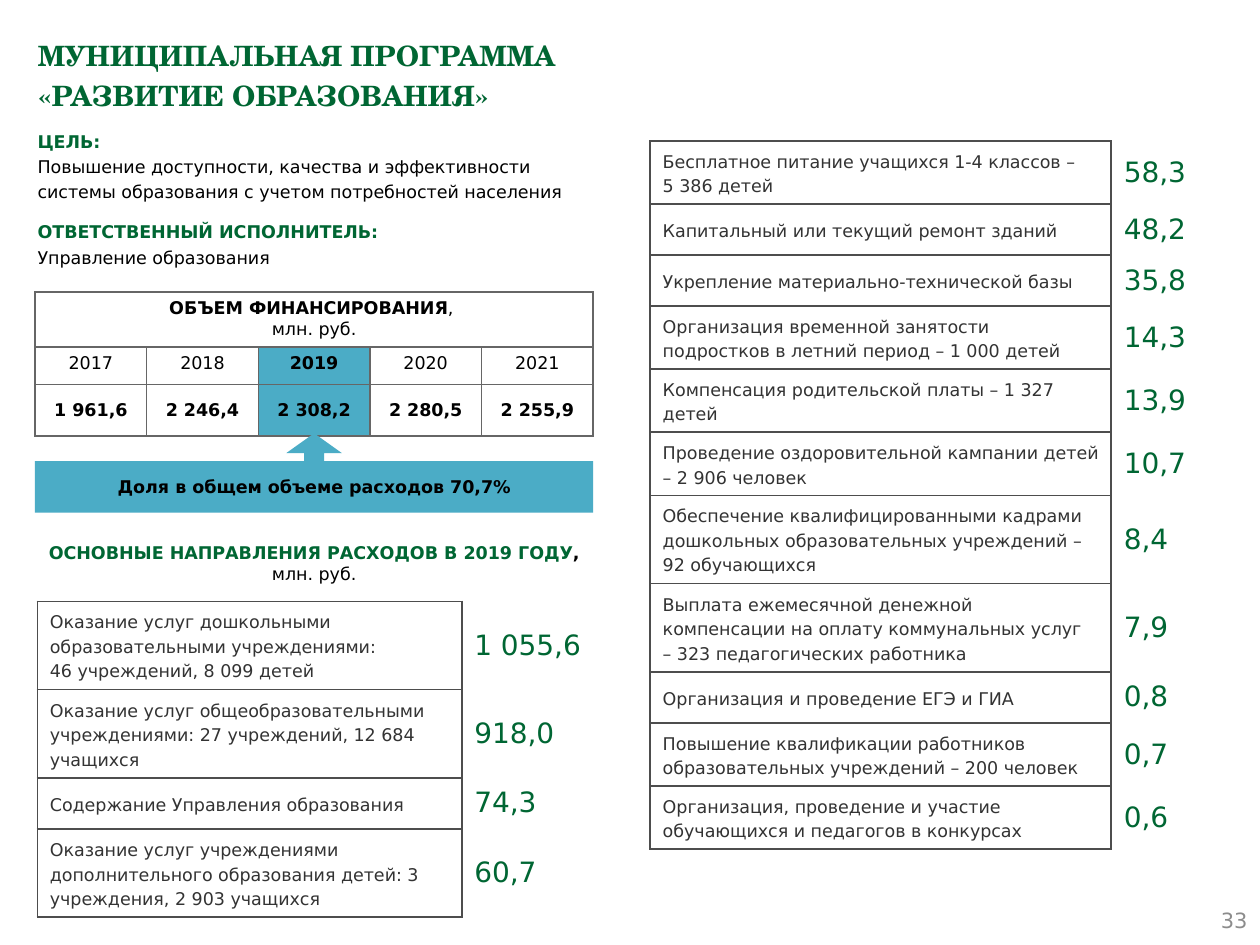
from lxml.etree import SubElement
from pptx import Presentation
from pptx.dml.color import RGBColor
from pptx.enum.shapes import MSO_SHAPE
from pptx.enum.text import MSO_ANCHOR, MSO_AUTO_SIZE, PP_ALIGN
from pptx.oxml.ns import qn
from pptx.util import Pt

SANS, SERIF = "DejaVu Sans", "TeX Gyre Schola"
GREEN = RGBColor(0x00, 0x66, 0x33)
BLACK = RGBColor(0x00, 0x00, 0x00)
TEAL = RGBColor(0x4B, 0xAC, 0xC6)
DARK = RGBColor(0x33, 0x33, 0x33)
EDGE = RGBColor(0x4D, 0x4D, 0x4D)
GRID = RGBColor(0x66, 0x66, 0x66)
PALE = RGBColor(0x8C, 0x8C, 0x8C)
PLAIN = "{2D5ABB26-0587-4C30-8999-92F81FD0307C}"

YEARS = [
    ("2017", "1 961,6"),
    ("2018", "2 246,4"),
    ("2019", "2 308,2"),
    ("2020", "2 280,5"),
    ("2021", "2 255,9"),
]
MAIN = [
    (["Оказание услуг дошкольными образовательными учреждениями:",
      "46 учреждений, 8 099 детей"], "1 055,6"),
    (["Оказание услуг общеобразовательными учреждениями: 27 учреждений, 12 684 учащихся"], "918,0"),
    (["Содержание Управления образования"], "74,3"),
    (["Оказание услуг учреждениями дополнительного образования детей: 3 учреждения, 2 903 учащихся"], "60,7"),
]
OTHER = [
    (["Бесплатное питание учащихся 1-4 классов –", "5 386 детей"], "58,3"),
    (["Капитальный или текущий ремонт зданий"], "48,2"),
    (["Укрепление материально-технической базы"], "35,8"),
    (["Организация временной занятости подростков в летний период – 1 000 детей"], "14,3"),
    (["Компенсация родительской платы – 1 327 детей"], "13,9"),
    (["Проведение оздоровительной кампании детей – 2 906 человек"], "10,7"),
    (["Обеспечение квалифицированными кадрами дошкольных образовательных учреждений – 92 обучающихся"], "8,4"),
    (["Выплата ежемесячной денежной компенсации на оплату коммунальных услуг  – 323 педагогических работника"], "7,9"),
    (["Организация и проведение ЕГЭ и ГИА"], "0,8"),
    (["Повышение квалификации работников образовательных учреждений – 200 человек"], "0,7"),
    (["Организация, проведение и участие обучающихся и педагогов в конкурсах"], "0,6"),
]


def add_run(para, text, color=BLACK, bold=False, size=10, face=SANS):
    run = para.add_run()
    run.text = text
    font = run.font
    font.name, font.size, font.bold = face, Pt(size), bold
    font.color.rgb = color


def fill_text(frame, paras, align=PP_ALIGN.LEFT, space=None):
    for i, runs in enumerate(paras):
        para = frame.add_paragraph() if i else frame.paragraphs[0]
        para.alignment, para.line_spacing = align, space
        for run in runs:
            add_run(para, *run)


def add_edges(cell, color, sides):
    props = cell._tc.get_or_add_tcPr()
    for side in sides:
        line = SubElement(props, qn(f"a:ln{side}"), w=str(Pt(1)))
        SubElement(SubElement(line, qn("a:solidFill")), qn("a:srgbClr"), val=str(color))


def add_grid(slide, box, cols, rows):
    table = slide.shapes.add_table(len(rows), len(cols), *map(Pt, box)).table
    table.first_row = table.horz_banding = False
    table._tbl.tblPr.find(qn("a:tableStyleId")).text = PLAIN
    for col, width in zip(table.columns, cols):
        col.width = Pt(width)
    for row, height in zip(table.rows, rows):
        row.height = Pt(height)
    return table


def add_title(slide, box):
    title = slide.shapes.title
    title.left, title.top, title.width, title.height = map(Pt, box)
    frame = title.text_frame
    frame.word_wrap, frame.auto_size = True, MSO_AUTO_SIZE.NONE
    frame.vertical_anchor = MSO_ANCHOR.TOP
    para = frame.paragraphs[0]
    para.alignment, para.line_spacing = PP_ALIGN.LEFT, 1.2
    add_run(para, "МУНИЦИПАЛЬНАЯ ПРОГРАММА ", GREEN, True, 16, SERIF)
    para.add_line_break()
    add_run(para, "«РАЗВИТИЕ ОБРАЗОВАНИЯ»", GREEN, True, 16, SERIF)


def add_goals(slide, box):
    frame = slide.shapes.add_textbox(*map(Pt, box)).text_frame
    frame.word_wrap = True
    fill_text(frame, [
        [("ЦЕЛЬ:", GREEN, True)],
        [("Повышение доступности, качества и эффективности системы образования с учетом потребностей населения",)],
        [("ОТВЕТСТВЕННЫЙ ИСПОЛНИТЕЛЬ:", GREEN, True)],
        [("Управление образования",)],
    ], space=1.2)
    frame.paragraphs[2].space_before = Pt(8.4)


def add_funds(slide, box):
    wide = box[2] / len(YEARS)
    table = add_grid(slide, box, [wide] * len(YEARS), [29.5, 21.5, 29.5])
    for cell in table.iter_cells():
        cell.margin_left = cell.margin_right = Pt(3.6)
        cell.margin_top = cell.margin_bottom = Pt(3.6)
        add_edges(cell, GRID, "LRTB")
    head = table.cell(0, 0)
    head.merge(table.cell(0, len(YEARS) - 1))
    fill_text(head.text_frame, [
        [("ОБЪЕМ ФИНАНСИРОВАНИЯ", BLACK, True), (", ",)],
        [("млн. руб.",)],
    ], PP_ALIGN.CENTER)
    for i, (year, sum_) in enumerate(YEARS):
        top, low = table.cell(1, i), table.cell(2, i)
        now = year == "2019"
        fill_text(top.text_frame, [[(year, BLACK, now)]], PP_ALIGN.CENTER)
        fill_text(low.text_frame, [[(sum_, BLACK, True)]], PP_ALIGN.CENTER)
        low.vertical_anchor = MSO_ANCHOR.MIDDLE
        if now:
            for cell in (top, low):
                cell.fill.solid()
                cell.fill.fore_color.rgb = TEAL


def add_costs(slide, box, cols, items):
    table = add_grid(slide, box, cols, [29.2] * len(items))
    for i, (lines, sum_) in enumerate(items):
        name, value = table.cell(i, 0), table.cell(i, 1)
        fill_text(name.text_frame, [[(line, DARK)] for line in lines], space=1.2)
        fill_text(value.text_frame, [[(sum_, GREEN, False, 16)]])
        name.vertical_anchor = value.vertical_anchor = MSO_ANCHOR.MIDDLE
        add_edges(name, EDGE, "LRTB")
        add_edges(value, EDGE, "L")


def add_label(slide, box, kind, adjust, runs, fill=None):
    shape = slide.shapes.add_shape(kind, *map(Pt, box))
    shape.shadow.inherit = False
    shape.line.fill.background()
    if fill is None:
        shape.fill.background()
    else:
        shape.fill.solid()
        shape.fill.fore_color.rgb = fill
    for i, part in enumerate(adjust):
        shape.adjustments[i] = part
    frame = shape.text_frame
    frame.word_wrap, frame.vertical_anchor = True, MSO_ANCHOR.MIDDLE
    fill_text(frame, [runs], PP_ALIGN.CENTER)


def add_page(slide, box):
    frame = slide.shapes.add_textbox(*map(Pt, box)).text_frame
    frame.word_wrap, frame.vertical_anchor = True, MSO_ANCHOR.MIDDLE
    fill_text(frame, [[("33", PALE, False, 12)]], PP_ALIGN.RIGHT)


def main():
    deck = Presentation()
    deck.slide_width, deck.slide_height = Pt(720), Pt(540)
    slide = deck.slides.add_slide(deck.slide_layouts[5])
    add_title(slide, (14.4, 14.4, 692, 57))
    add_page(slide, (552, 511, 168, 29))
    add_goals(slide, (14.4, 69, 324, 88.5))
    add_funds(slide, (20, 167, 319, 80.5))
    add_costs(slide, (371.5, 80.5, 408, 321.2), [263.5, 144.5], OTHER)
    add_label(slide, (20, 306, 319, 31), MSO_SHAPE.PENTAGON, [0], [
        ("ОСНОВНЫЕ НАПРАВЛЕНИЯ РАСХОДОВ В 2019 ГОДУ", GREEN, True),
        (", ", BLACK, True),
        ("млн. руб.",),
    ])
    add_label(slide, (20, 247.6, 319, 45.4), MSO_SHAPE.UP_ARROW_CALLOUT,
              [0.25, 0.35, 0.25, 0.65],
              [("Доля в общем объеме расходов 70,7%", BLACK, True)], TEAL)
    add_costs(slide, (21.3, 343.6, 379, 116.8), [242.6, 136.4], MAIN)
    deck.save("out.pptx")


if __name__ == "__main__":
    main()
